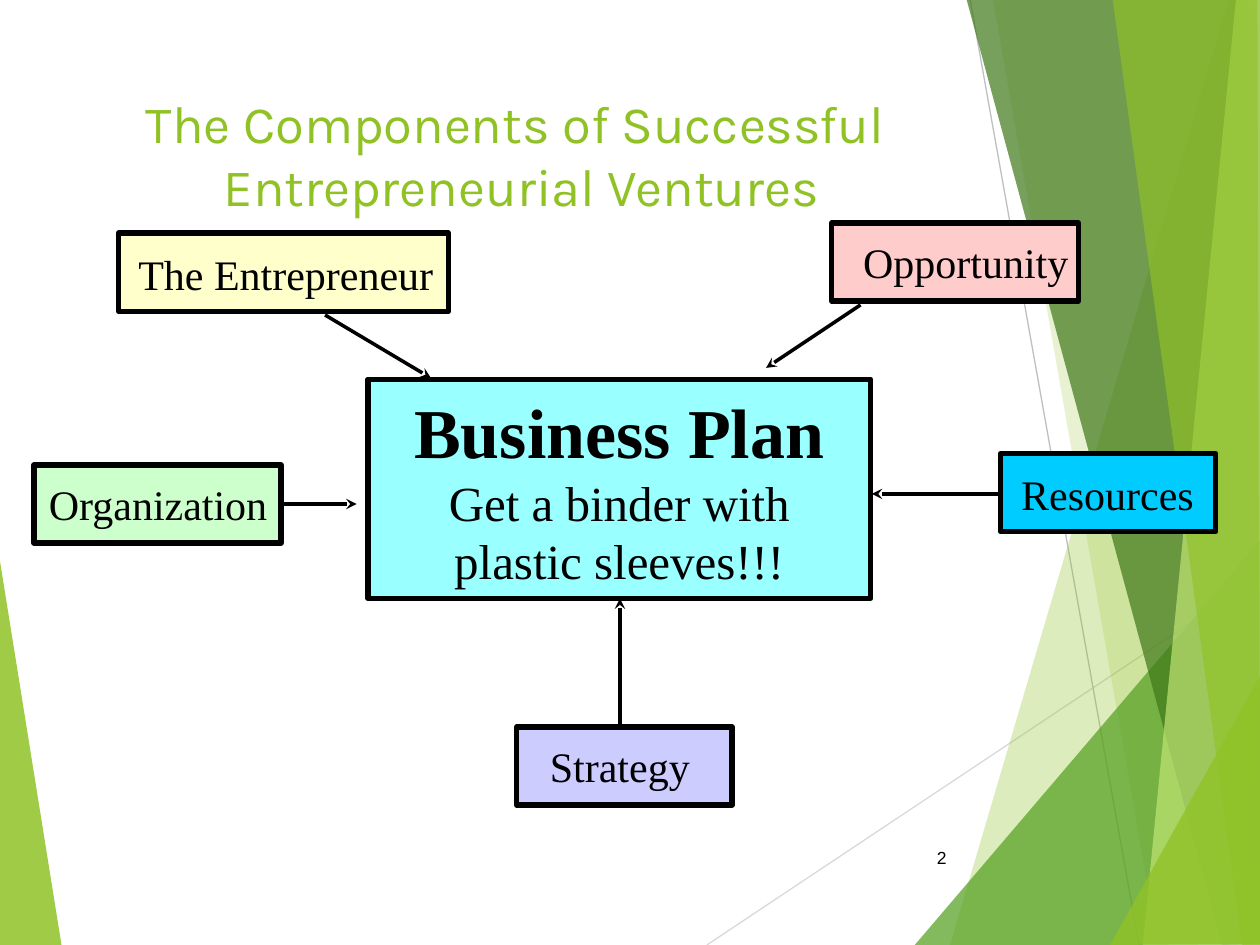
"""Build the slide on the components of successful entrepreneurial ventures."""
from lxml import etree
from pptx import Presentation
from pptx.dml.color import RGBColor
from pptx.enum.shapes import MSO_CONNECTOR, MSO_SHAPE
from pptx.enum.text import MSO_ANCHOR, PP_ALIGN
from pptx.oxml.ns import qn
from pptx.util import Pt

PX = 9144
LEFT, CENTER, RIGHT = PP_ALIGN.LEFT, PP_ALIGN.CENTER, PP_ALIGN.RIGHT
TOP, MIDDLE = MSO_ANCHOR.TOP, MSO_ANCHOR.MIDDLE
RECT, STRAIGHT = MSO_SHAPE.RECTANGLE, MSO_CONNECTOR.STRAIGHT

BLACK = RGBColor(0x00, 0x00, 0x00)
LIME = RGBColor(0x90, 0xC2, 0x26)
GREEN = RGBColor(0x54, 0xA0, 0x21)
FOREST = RGBColor(0x3F, 0x78, 0x19)
PALE_LIME = RGBColor(0xC0, 0xE4, 0x74)
LIGHT_GREY = RGBColor(0xD9, 0xD9, 0xD9)
GREY = RGBColor(0xBF, 0xBF, 0xBF)
LAVENDER = RGBColor(0xCC, 0xCC, 0xFF)
SKY = RGBColor(0x00, 0xCC, 0xFF)
PINK = RGBColor(0xFF, 0xCC, 0xCC)
MINT = RGBColor(0xCC, 0xFF, 0xCC)
CREAM = RGBColor(0xFF, 0xFF, 0xCC)
AQUA = RGBColor(0x99, 0xFF, 0xFF)


def write(p, text, size=24, font="Times New Roman", color=BLACK, bold=False, align=CENTER):
    p.text = text
    p.alignment = align
    p.font.size = Pt(size)
    p.font.name = font
    p.font.color.rgb = color
    p.font.bold = bold


def connect(shapes, ends, color, width, arrow=False):
    cxn = shapes.add_connector(STRAIGHT, *[v * PX for v in ends])
    cxn.line.color.rgb = color
    cxn.line.width = Pt(width)
    if arrow:
        etree.SubElement(cxn.line._get_or_add_ln(), qn("a:tailEnd"), type="stealth")
    etree.SubElement(cxn._element.spPr, qn("a:effectLst"))


prs = Presentation()
prs.slide_width, prs.slide_height = 1000 * PX, 750 * PX
slide = prs.slides.add_slide(prs.slide_layouts[5])
shapes = slide.shapes

for ends, color in [((561, 750, 1001, 457), LIGHT_GREY), ((770, 0, 904, 750), GREY)]:
    connect(shapes, ends, color, 0.75)

facets = [
    ([(-1, 439), (49, 751), (-1, 750)], LIME, 85),
    ([(975, 0), (754, 750), (1002, 751), (1001, 1)], LIME, 30),
    ([(788, -1), (919, 750), (1001, 750), (1001, -1)], LIME, 20),
    ([(726, 750), (1000, 429), (1001, 750)], GREEN, 72),
    ([(767, -1), (970, 750), (1001, 749), (1001, -1)], FOREST, 70),
    ([(981, -1), (907, 750), (1001, 750), (1000, -1)], PALE_LIME, 70),
    ([(883, -1), (986, 750), (1000, 750), (998, -1)], LIME, 65),
    ([(881, 750), (1001, 535), (1001, 749)], LIME, 80),
]
for points, color, opacity in facets:
    builder = shapes.build_freeform(*points[0], scale=PX)
    builder.add_line_segments(points[1:])
    sp = builder.convert_to_shape()
    sp.shadow.inherit = False
    sp.line.fill.background()
    sp.fill.solid()
    sp.fill.fore_color.rgb = color
    clr = sp._element.spPr.find(qn("a:solidFill"))[0]
    etree.SubElement(clr, qn("a:alpha"), val=str(opacity * 1000))

title = shapes.title
title.left, title.top, title.width, title.height = [v * PX for v in (67, 67, 694, 144)]
title.text_frame.vertical_anchor = TOP
write(title.text_frame.paragraphs[0], "The Components of Successful \vEntrepreneurial Ventures",
      size=30, font="Karla", color=LIME)

boxes = [
    ((410, 577, 171, 62), LAVENDER),
    ((794, 360, 171, 62), SKY),
    ((660, 177, 196, 62), PINK),
    ((27, 369, 196, 62), MINT),
    ((94, 185, 262, 62), CREAM),
    ((292, 301, 399, 174), AQUA),
]
for box, color in boxes:
    sp = shapes.add_shape(RECT, *[v * PX for v in box])
    sp.shadow.inherit = False
    sp.fill.solid()
    sp.fill.fore_color.rgb = color
    sp.line.color.rgb = BLACK
    sp.line.width = Pt(3)

tf = sp.text_frame
tf.word_wrap = False
tf.vertical_anchor = MIDDLE
write(tf.paragraphs[0], "Business Plan", size=40, bold=True)
for text in ("Get a binder with", "plastic sleeves!!!"):
    write(tf.add_paragraph(), text, size=28)

labels = [
    ("The Entrepreneur", (100, 192, 267, 50), TOP, {"align": LEFT}),
    ("Opportunity", (608, 183, 317, 50), TOP, {}),
    ("Resources", (775, 367, 208, 50), TOP, {}),
    ("Organization", (17, 375, 217, 50), TOP, {}),
    ("Strategy", (367, 583, 250, 50), TOP, {}),
    ("2", (705, 661, 56, 40), MIDDLE, {"size": 10, "font": "Arial", "align": RIGHT}),
]
for text, box, anchor, style in labels:
    tf = shapes.add_textbox(*[v * PX for v in box]).text_frame
    tf.word_wrap = True
    tf.vertical_anchor = anchor
    write(tf.paragraphs[0], text, **style)

arrows = [
    (258, 250, 342, 300),
    (683, 242, 608, 292),
    (792, 392, 692, 392),
    (492, 575, 492, 475),
    (225, 400, 283, 400),
]
for ends in arrows:
    connect(shapes, ends, BLACK, 2, arrow=True)

prs.save("out.pptx")
